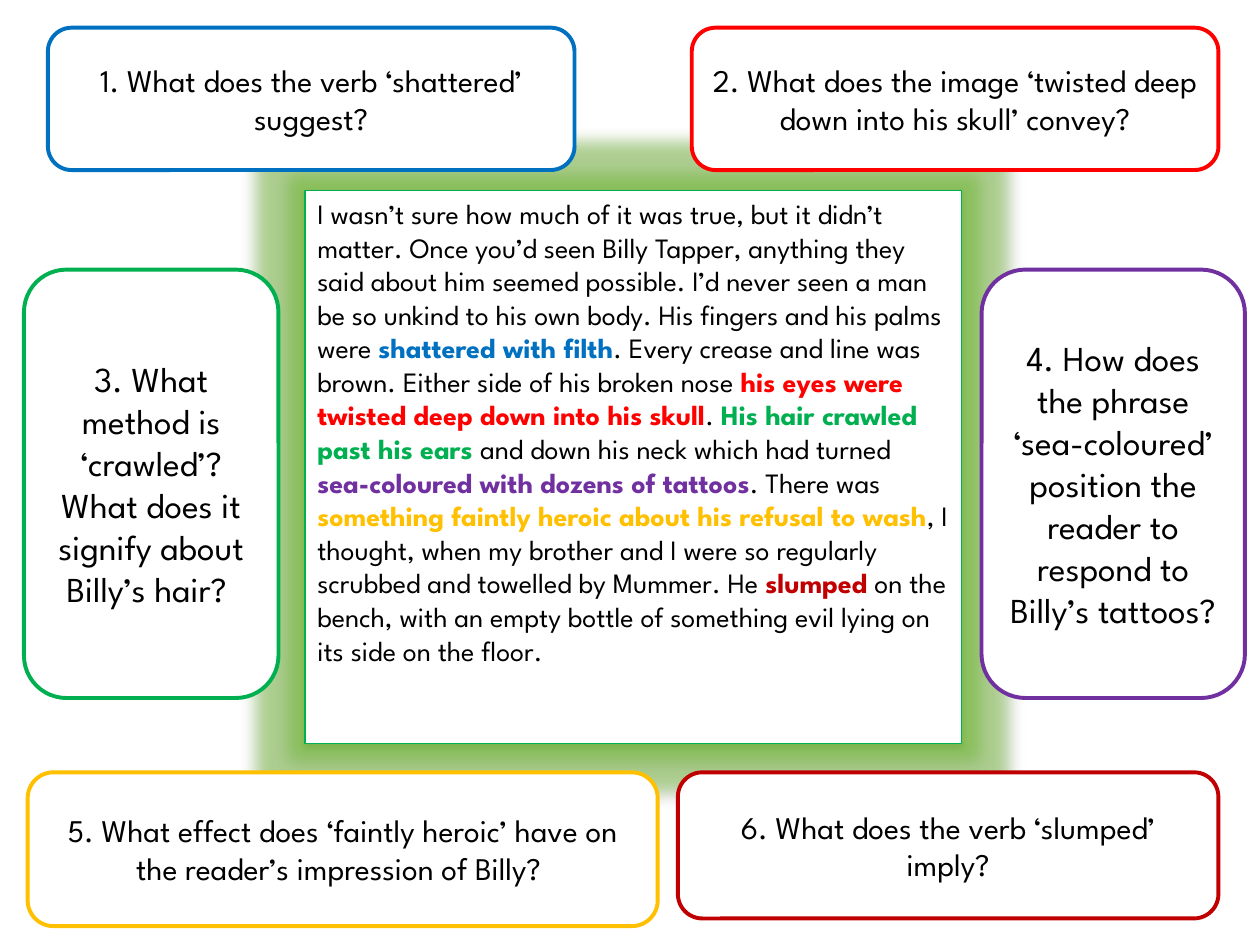
from lxml import etree
from pptx import Presentation
from pptx.dml.color import RGBColor
from pptx.enum.shapes import MSO_SHAPE
from pptx.enum.text import MSO_ANCHOR, PP_ALIGN
from pptx.oxml import parse_xml
from pptx.oxml.ns import nsdecls
from pptx.util import Inches, Pt

FONT = "League Spartan"
BLACK, WHITE = "000000", "FFFFFF"
BLUE, RED, GREEN = "0070C0", "FF0000", "00B050"
PURPLE, GOLD, CRIMSON = "7030A0", "FFC000", "C00000"

presentation = Presentation()
presentation.slide_width, presentation.slide_height = Inches(10), Inches(7.5)
slide = presentation.slides.add_slide(presentation.slide_layouts[6])
COLUMN = presentation.slide_width / 100
ROW = presentation.slide_height / 75


def add_box(preset, cell, line_color, line_width, anchor, alignment):
    """Add a white outlined box at (column, row, columns, rows); return it and its paragraph."""
    left, top, width, height = cell
    shape = slide.shapes.add_shape(preset, round(left * COLUMN), round(top * ROW),
                                   round(width * COLUMN), round(height * ROW))
    shape.shadow.inherit = False
    shape.fill.solid()
    shape.fill.fore_color.rgb = RGBColor.from_string(WHITE)
    shape.line.color.rgb = RGBColor.from_string(line_color)
    shape.line.width = Pt(line_width)
    shape.text_frame.word_wrap = True
    shape.text_frame.vertical_anchor = anchor
    paragraph = shape.text_frame.paragraphs[0]
    paragraph.alignment = alignment
    return shape, paragraph


def add_run(paragraph, text, size, color=BLACK):
    run = paragraph.add_run()
    run.text = text
    run.font.name = FONT
    run.font.size = Pt(size)
    run.font.bold = color != BLACK
    run.font.color.rgb = RGBColor.from_string(color)


# Extract in the middle, with a green glow and a soft shadow
extract, paragraph = add_box(MSO_SHAPE.RECTANGLE, (24.2, 15.1, 52.1, 43.9),
                             GREEN, 0.75, MSO_ANCHOR.TOP, PP_ALIGN.LEFT)
effects = extract.element.spPr.find("{*}effectLst")
glow = etree.SubElement(effects, effects.tag.replace("effectLst", "glow"), rad=str(Pt(18)))
glow.append(parse_xml(f'<a:srgbClr {nsdecls("a")} val="6CC024"><a:alpha val="40000"/></a:srgbClr>'))
effects.append(parse_xml(
    f'<a:outerShdw {nsdecls("a")} blurRad="{Pt(3.1)}" dist="{Pt(1.6)}" dir="5400000" rotWithShape="0">'
    f'<a:srgbClr val="{BLACK}"><a:alpha val="38000"/></a:srgbClr></a:outerShdw>'))

passage = [
    ("I wasn’t sure how much of it was true, but it didn’t matter. Once you’d seen Billy Tapper, "
     "anything they said about him seemed possible. I’d never seen a man be so unkind to his own "
     "body. His fingers and his palms were ", BLACK),
    ("shattered with filth", BLUE),
    (". Every crease and line was brown. Either side of his broken nose ", BLACK),
    ("his eyes were twisted deep down into his skull", RED),
    (". ", BLACK),
    ("His hair crawled past his ears ", GREEN),
    ("and down his neck which had turned ", BLACK),
    ("sea-coloured with dozens of tattoos", PURPLE),
    (". There was ", BLACK),
    ("something faintly heroic about his refusal to wash", GOLD),
    (", I thought, when my brother and I were so regularly scrubbed and towelled by Mummer. He ", BLACK),
    ("slumped", CRIMSON),
    (" on the bench, with an empty bottle of something evil lying on its side on the floor.", BLACK),
]
for text, color in passage:
    add_run(paragraph, text, 16, color)

# Questions around it, each outlined in the colour of its quotation
questions = [
    ((3.8, 2.2, 41.8, 11.3), BLUE, 18, "1. What does the verb ‘shattered’ suggest?"),
    ((54.9, 2.2, 41.8, 11.3), RED, 18,
     "2. What does the image ‘twisted deep down into his skull’ convey?"),
    ((1.9, 21.4, 20.2, 34), GREEN, 20,
     "3. What method is ‘crawled’? What does it signify about Billy’s hair? "),
    ((2.2, 61.3, 50, 12.2), GOLD, 18,
     "5. What effect does ‘faintly heroic’ have on the reader’s impression of Billy? "),
    ((77.9, 21.4, 20.9, 34), PURPLE, 20,
     "4. How does the phrase ‘sea-coloured’ position the reader to respond to Billy’s tattoos? "),
    ((53.8, 61.3, 42.9, 11.6), CRIMSON, 18, "6. What does the verb ‘slumped’ imply?"),
]
for cell, color, size, text in questions:
    _, paragraph = add_box(MSO_SHAPE.ROUNDED_RECTANGLE, cell, color, 2.25,
                           MSO_ANCHOR.MIDDLE, PP_ALIGN.CENTER)
    add_run(paragraph, text, size)

presentation.save("out.pptx")
